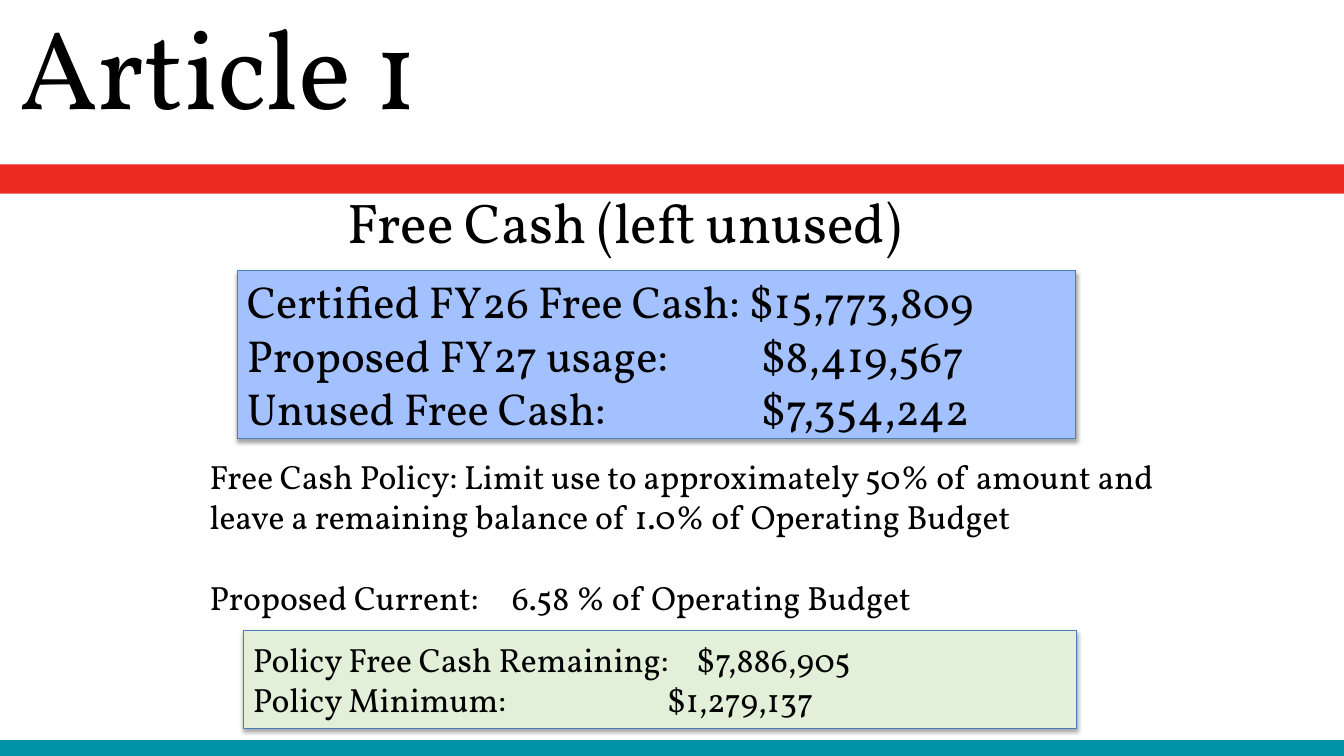
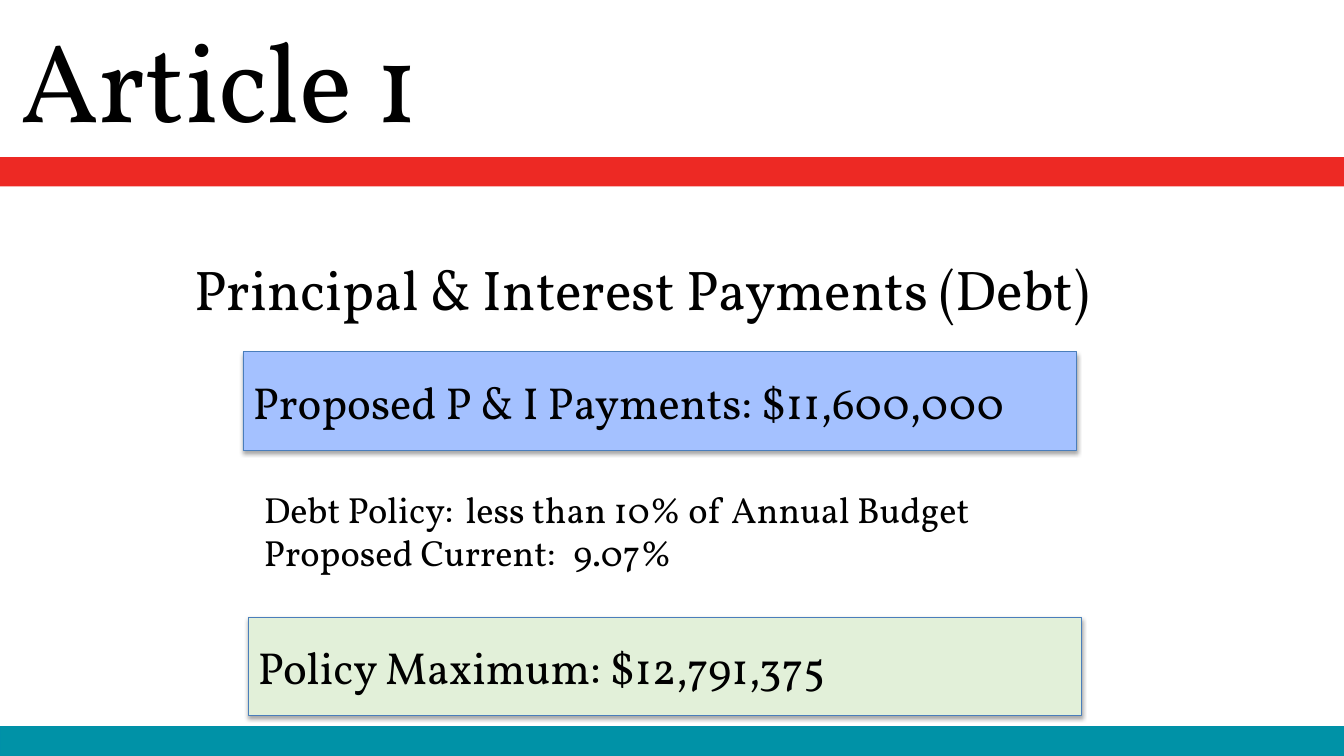
from dataclasses import dataclass

from lxml import etree
from pptx import Presentation
from pptx.dml.color import RGBColor
from pptx.enum.shapes import MSO_SHAPE
from pptx.enum.text import MSO_ANCHOR, PP_ALIGN
from pptx.oxml.ns import qn
from pptx.util import Inches, Pt

RECTANGLE = MSO_SHAPE.RECTANGLE
TOP, MIDDLE = MSO_ANCHOR.TOP, MSO_ANCHOR.MIDDLE
LEFT = PP_ALIGN.LEFT

SLIDE_WIDTH, SLIDE_HEIGHT = Inches(13.333), Inches(7.5)
COLUMNS = ROWS = 100  # the grid: one cell is one percent of the slide


@dataclass(frozen=True)
class Theme:
    font: str = "Vollkorn"
    ink: str = "000000"
    red: str = "ED2924"
    teal: str = "0092A7"
    teal_edge: str = "0090A8"
    blue: str = "A4C1FF"
    green: str = "E2F0D9"
    panel_edge: str = "4A7EBB"
    title: int = 80
    heading: int = 40
    figure: int = 32
    note: int = 26
    detail: int = 24
    tight: float = 0.9


THEME = Theme()


@dataclass(frozen=True)
class Area:
    """Left, top, width and height in grid columns and rows."""
    left: float
    top: float
    width: float
    height: float

    def lengths(self) -> tuple[int, int, int, int]:
        column, row = SLIDE_WIDTH / COLUMNS, SLIDE_HEIGHT / ROWS
        return (round(self.left * column), round(self.top * row),
                round(self.width * column), round(self.height * row))


@dataclass(frozen=True)
class Line:
    """One paragraph, with its tab stop in inches and space before in points."""
    text: str
    tab: float = 0
    before: float = 0


@dataclass(frozen=True)
class Block:
    """Lines of text, on a panel when a fill is given."""
    area: Area
    size: int
    lines: tuple[Line, ...]
    fill: str = ""


@dataclass(frozen=True)
class Page:
    title_left: float
    title_top: float
    red_top: float
    teal_top: float
    heading: str
    heading_area: Area
    blocks: tuple[Block, ...]


TITLE = "Article 1"
TITLE_WIDTH, TITLE_HEIGHT = 86.25, 19.33
BAND_HEIGHT = 3.87
PANEL_LEFT, PANEL_WIDTH, PANEL_HEIGHT = 18.08, 62.03, 13.07

PAGES = (
    Page(0.68, 0, 21.73, 98, "Free Cash (left unused)",
         Area(25.13, 20.13, 74.87, TITLE_HEIGHT), (
             Block(Area(17.63, 35.73, 62.4, 22.27), THEME.figure, (
                 Line("Certified FY26 Free Cash: $15,773,809"),
                 Line("Proposed FY27 usage:\t$8,419,567", tab=5.1),
                 Line("Unused Free Cash:\t$7,354,242", tab=5.1),
             ), THEME.blue),
             Block(Area(PANEL_LEFT, 83.33, PANEL_WIDTH, PANEL_HEIGHT), THEME.detail, (
                 Line("Policy Free Cash Remaining:\t$7,886,905", tab=4.4),
                 Line("Policy Minimum:\t$1,279,137", tab=4.11),
             ), THEME.green),
             Block(Area(14.85, 59.6, 74.25, 22.93), THEME.detail, (
                 Line("Free Cash Policy: Limit use to approximately 50% of amount and "
                      "leave a remaining balance of 1.0% of Operating Budget"),
                 Line("Proposed Current:\t6.58 % of Operating Budget", tab=3, before=29),
             )),
         )),
    Page(0.75, 1.73, 20.8, 96.13, "Principal & Interest Payments (Debt)",
         Area(13.73, 29.07, TITLE_WIDTH, TITLE_HEIGHT), (
             Block(Area(PANEL_LEFT, 46.53, PANEL_WIDTH, PANEL_HEIGHT), THEME.figure, (
                 Line("Proposed P & I Payments: $11,600,000"),
             ), THEME.blue),
             Block(Area(18.45, 81.6, PANEL_WIDTH, PANEL_HEIGHT), THEME.figure, (
                 Line("Policy Maximum: $12,791,375"),
             ), THEME.green),
             Block(Area(18.9, 63.73, 61.2, 12.93), THEME.note, (
                 Line("Debt Policy:\tless than 10% of Annual Budget", tab=2),
                 Line("Proposed Current:\t9.07%", tab=3.07),
             )),
         )),
)


def add_tab_stop(para, inches: float) -> None:
    stops = etree.SubElement(para._p.get_or_add_pPr(), qn("a:tabLst"))
    etree.SubElement(stops, qn("a:tab"), pos=str(Inches(inches)), algn="l")


def write(box, lines: tuple[Line, ...], *, size: int, anchor=TOP,
          spacing: float = 1.0) -> None:
    frame = box.text_frame
    frame.word_wrap = True
    frame.vertical_anchor = anchor
    for index, line in enumerate(lines):
        para = frame.add_paragraph() if index else frame.paragraphs[0]
        if line.tab:
            add_tab_stop(para, line.tab)
        para.alignment = LEFT
        para.line_spacing = spacing
        if line.before:
            para.space_before = Pt(line.before)
        span = para.add_run()
        span.text = line.text
        span.font.name = THEME.font
        span.font.size = Pt(size)
        span.font.color.rgb = RGBColor.from_string(THEME.ink)


def add_rectangle(slide, area: Area, fill: str, edge: str = "", edge_width: float = 1):
    box = slide.shapes.add_shape(RECTANGLE, *area.lengths())
    box.shadow.inherit = False
    box.fill.solid()
    box.fill.fore_color.rgb = RGBColor.from_string(fill)
    if edge:
        box.line.color.rgb = RGBColor.from_string(edge)
        box.line.width = Pt(edge_width)
    else:
        box.line.fill.background()
    return box


def drop_shadow(box) -> None:
    effects = box._element.spPr.find(qn("a:effectLst"))
    shadow = etree.SubElement(effects, qn("a:outerShdw"), blurRad=str(Pt(3.1)),
                              dist=str(Pt(1.8)), dir="5400000", rotWithShape="0")
    color = etree.SubElement(shadow, qn("a:srgbClr"), val=THEME.ink)
    etree.SubElement(color, qn("a:alpha"), val="35000")


def add_block(slide, block: Block) -> None:
    if block.fill:
        box = add_rectangle(slide, block.area, block.fill, THEME.panel_edge, 0.5)
        drop_shadow(box)
    else:
        box = slide.shapes.add_textbox(*block.area.lengths())
    write(box, block.lines, size=block.size, anchor=MIDDLE if block.fill else TOP)


def add_headline(slide, text: str, area: Area, size: int) -> None:
    box = slide.shapes.add_textbox(*area.lengths())
    write(box, (Line(text),), size=size, anchor=MIDDLE, spacing=THEME.tight)


def add_page(deck, page: Page) -> None:
    slide = deck.slides.add_slide(deck.slide_layouts[6])
    for block in page.blocks:
        add_block(slide, block)
    add_headline(slide, page.heading, page.heading_area, THEME.heading)
    add_rectangle(slide, Area(0, page.red_top, COLUMNS, BAND_HEIGHT), THEME.red)
    add_rectangle(slide, Area(0, page.teal_top, COLUMNS, BAND_HEIGHT),
                  THEME.teal, THEME.teal_edge)
    title_area = Area(page.title_left, page.title_top, TITLE_WIDTH, TITLE_HEIGHT)
    add_headline(slide, TITLE, title_area, THEME.title)


def main() -> None:
    deck = Presentation()
    deck.slide_width, deck.slide_height = SLIDE_WIDTH, SLIDE_HEIGHT
    for page in PAGES:
        add_page(deck, page)
    deck.save("out.pptx")


if __name__ == "__main__":
    main()
